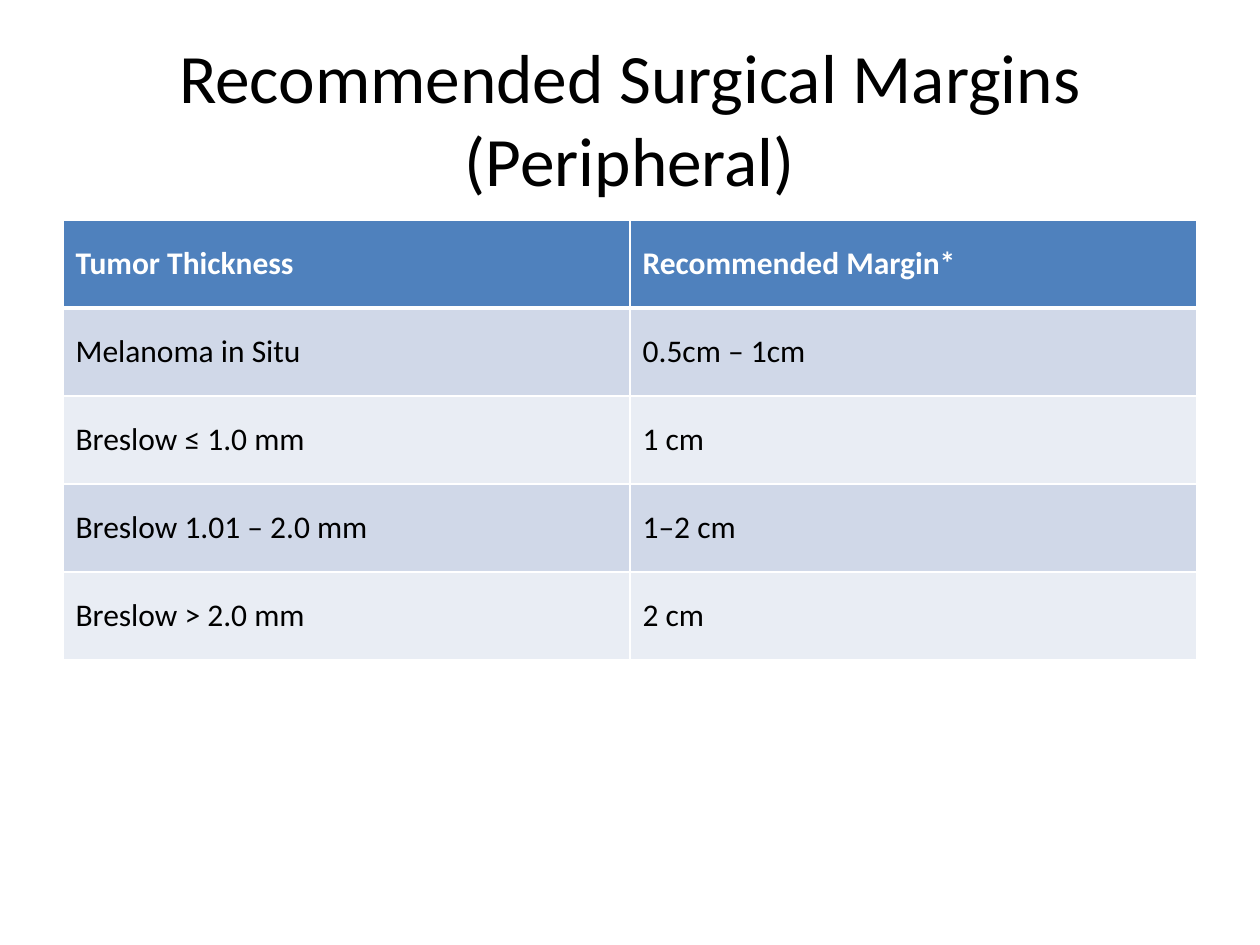
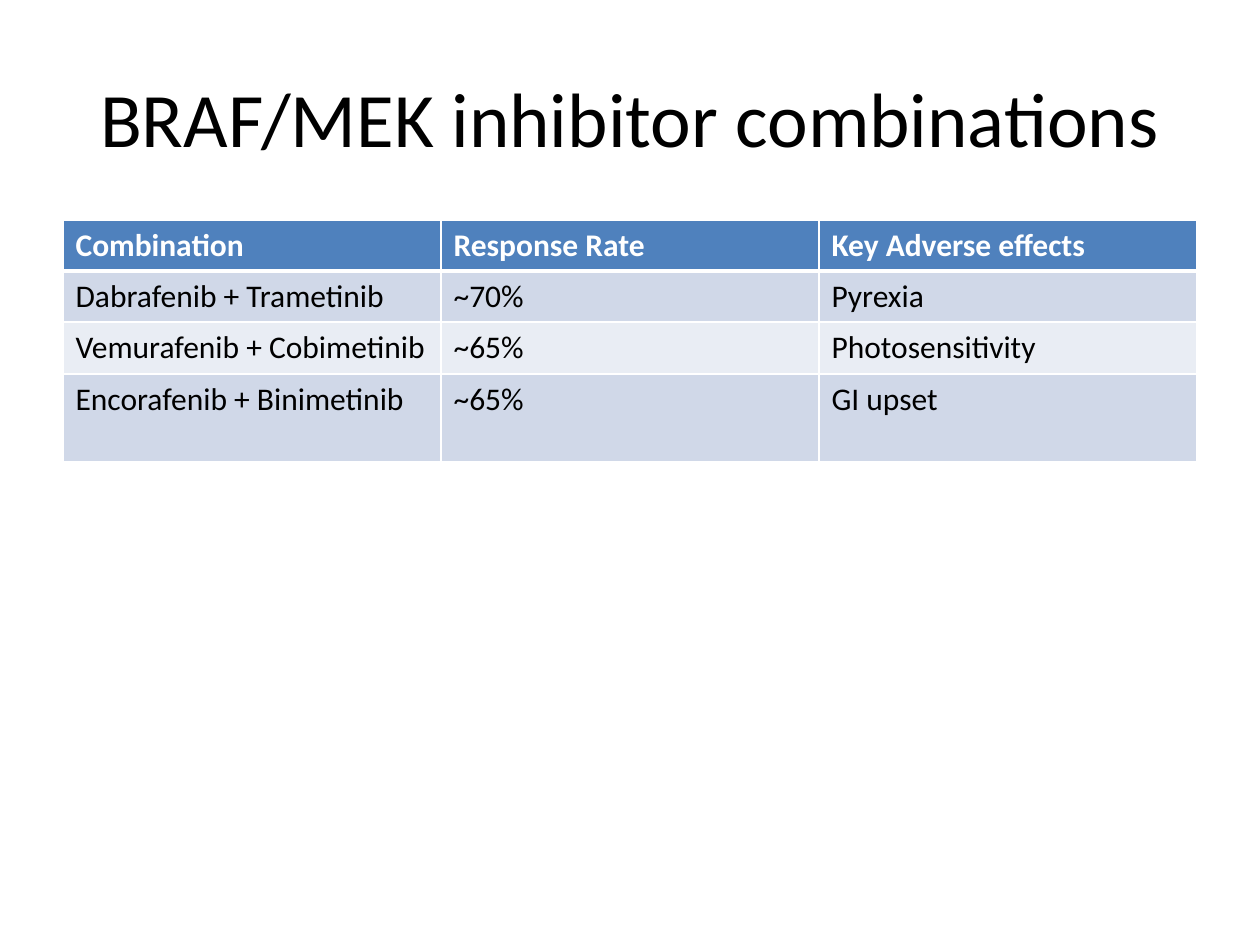
from lxml.etree import SubElement
from pptx import Presentation
from pptx.dml.color import RGBColor
from pptx.enum.text import MSO_ANCHOR as Anchor, PP_ALIGN as Align
from pptx.oxml.ns import qn
from pptx.util import Pt

SLIDES = [
    {
        "title": "Recommended Surgical Margins (Peripheral)",
        "title_size": 39.6,
        "anchor": Anchor.MIDDLE,
        "row_heights": [88] * 5,
        "rows": [
            ("Tumor Thickness", "Recommended Margin*"),
            ("Melanoma in Situ", "0.5cm – 1cm"),
            ("Breslow ≤ 1.0 mm", "1 cm"),
            ("Breslow 1.01 – 2.0 mm", "1–2 cm"),
            ("Breslow > 2.0 mm", "2 cm"),
        ],
    },
    {
        "title": "BRAF/MEK inhibitor combinations",
        "title_size": 44,
        "anchor": Anchor.TOP,
        "row_heights": [51, 51, 52, 88],
        "rows": [
            ("Combination", "Response Rate", "Key Adverse effects"),
            ("Dabrafenib + Trametinib", "~70%", "Pyrexia"),
            ("Vemurafenib + Cobimetinib", "~65%", "Photosensitivity"),
            ("Encorafenib + Binimetinib", "~65%", "GI upset"),
        ],
    },
]

SLIDE_WIDTH, SLIDE_HEIGHT = 1260, 945
MARGIN = 63
CONTENT_WIDTH = SLIDE_WIDTH - 2 * MARGIN
TITLE_TOP, TITLE_HEIGHT = 38, 158
TABLE_TOP = 220

FONT = "Calibri"
WHITE, BLACK = "FFFFFF", "000000"
HEADER_FILL = "4F81BD"
BAND_FILLS = ["D0D8E8", "E9EDF4"]
HEADER_FORMAT = {"name": FONT, "size": Pt(18), "bold": True}
BODY_FORMAT = {"name": FONT, "size": Pt(18), "bold": False}
THIN, THICK = 1, 3


def px(length):
    return round(length * 914400 / 126)


def color(value):
    return RGBColor.from_string(value)


def write(text_frame, text, text_color, font_format):
    paragraph = text_frame.paragraphs[0]
    run = paragraph.add_run()
    run.text = text
    for name, value in font_format.items():
        setattr(run.font, name, value)
    run.font.color.rgb = color(text_color)
    return paragraph


def add_title(slide, text, size):
    shape = slide.shapes.add_textbox(
        px(MARGIN), px(TITLE_TOP), px(CONTENT_WIDTH), px(TITLE_HEIGHT)
    )
    text_frame = shape.text_frame
    text_frame.word_wrap = True
    text_frame.vertical_anchor = Anchor.MIDDLE
    paragraph = write(text_frame, text, BLACK, {"name": FONT, "size": Pt(size)})
    paragraph.alignment = Align.CENTER


def add_borders(cell, row_index):
    widths = {
        "L": THIN,
        "R": THIN,
        "T": THICK if row_index == 1 else THIN,
        "B": THICK if row_index == 0 else THIN,
    }
    properties = cell._tc.get_or_add_tcPr()
    for side, width in widths.items():
        line = SubElement(properties, qn(f"a:ln{side}"), w=str(Pt(width)))
        fill = SubElement(line, qn("a:solidFill"))
        SubElement(fill, qn("a:srgbClr"), val=WHITE)


def add_table(slide, rows, row_heights, anchor):
    column_count = len(rows[0])
    table = slide.shapes.add_table(
        len(rows), column_count, px(MARGIN), px(TABLE_TOP),
        px(CONTENT_WIDTH), px(sum(row_heights)),
    ).table
    for column in table.columns:
        column.width = px(CONTENT_WIDTH / column_count)
    for row_index, (texts, height) in enumerate(zip(rows, row_heights)):
        table.rows[row_index].height = px(height)
        if row_index == 0:
            fill, text_color, font_format = HEADER_FILL, WHITE, HEADER_FORMAT
        else:
            fill = BAND_FILLS[(row_index - 1) % 2]
            text_color, font_format = BLACK, BODY_FORMAT
        for column_index, text in enumerate(texts):
            cell = table.cell(row_index, column_index)
            cell.vertical_anchor = anchor
            add_borders(cell, row_index)
            cell.fill.solid()
            cell.fill.fore_color.rgb = color(fill)
            write(cell.text_frame, text, text_color, font_format)


def main():
    presentation = Presentation()
    presentation.slide_width = px(SLIDE_WIDTH)
    presentation.slide_height = px(SLIDE_HEIGHT)
    for content in SLIDES:
        slide = presentation.slides.add_slide(presentation.slide_layouts[6])
        add_title(slide, content["title"], content["title_size"])
        add_table(slide, content["rows"], content["row_heights"], content["anchor"])
    presentation.save("out.pptx")


if __name__ == "__main__":
    main()
